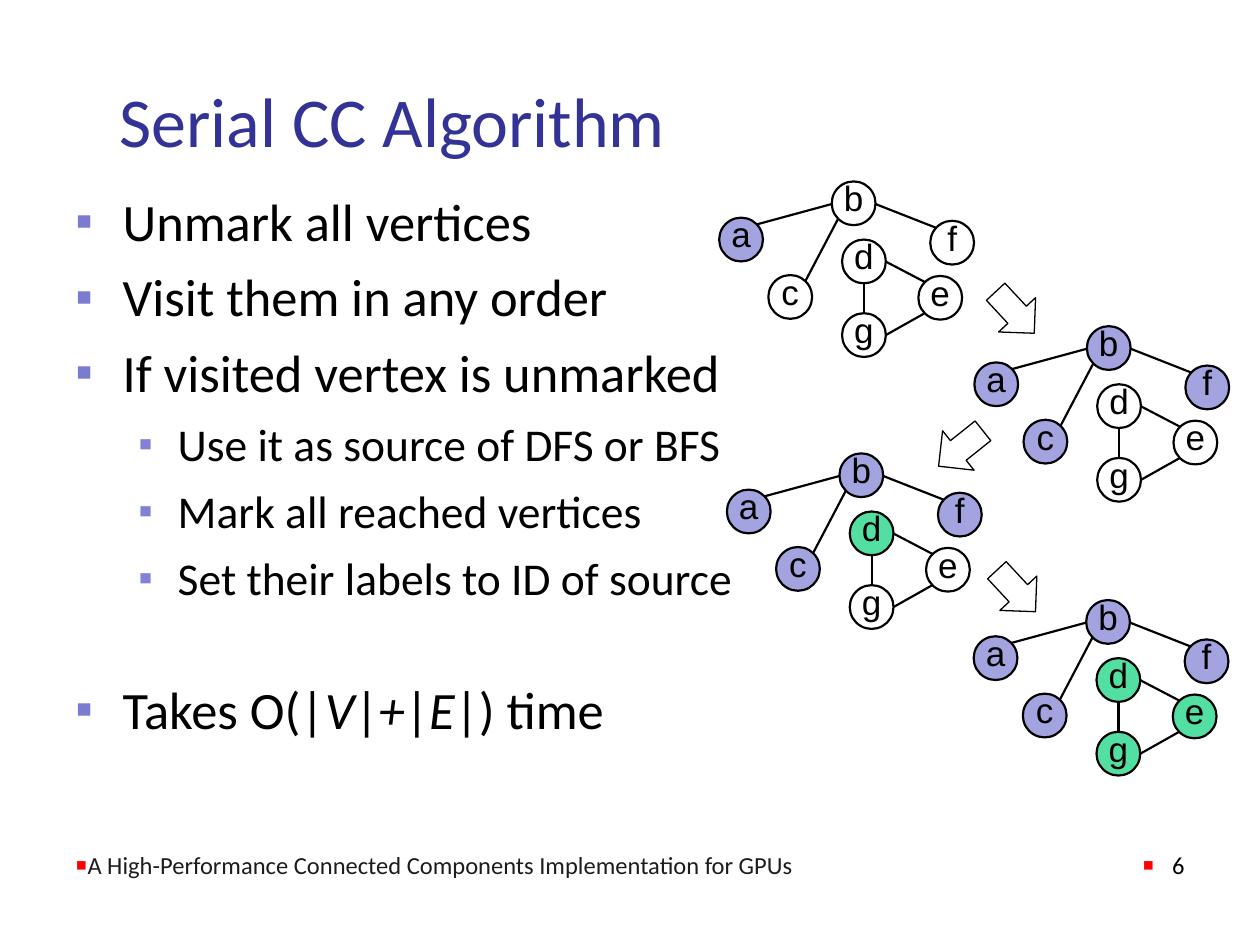
from dataclasses import dataclass

from lxml import etree
from pptx import Presentation
from pptx.dml.color import RGBColor
from pptx.enum.shapes import MSO_CONNECTOR, MSO_SHAPE
from pptx.enum.text import MSO_ANCHOR, PP_ALIGN
from pptx.oxml.ns import qn
from pptx.util import Pt

LINE = MSO_CONNECTOR.STRAIGHT
OVAL = MSO_SHAPE.OVAL
ARROW = MSO_SHAPE.RIGHT_ARROW
TOP, MIDDLE, BOTTOM = MSO_ANCHOR.TOP, MSO_ANCHOR.MIDDLE, MSO_ANCHOR.BOTTOM
LEFT, CENTER, RIGHT = PP_ALIGN.LEFT, PP_ALIGN.CENTER, PP_ALIGN.RIGHT


@dataclass(frozen=True)
class Theme:
    """Colours, fonts and type sizes of the slide."""
    black: str = "000000"
    title: str = "333397"
    foot: str = "1C1C1C"
    mark: str = "7B7BD1"
    submark: str = "8282D4"
    red: str = "FF0000"
    violet: str = "A3A3E0"
    green: str = "54DFA2"
    sans: str = "Calibri"
    label: str = "Arial"
    head_size: int = 40
    body_size: int = 30
    sub_size: int = 26
    node_size: int = 20
    foot_size: int = 14


THEME = Theme()
NODE = 25
NODES = {
    "d": (70.2, 33.2), "g": (70.2, 75.3), "a": (0, 20.7), "c": (28.1, 53.5),
    "e": (113.8, 54), "f": (120.6, 22.5), "b": (64.3, 0),
}
EDGES = [
    (82.7, 58.2, 82.7, 75.3), (117.4, 57.4, 95.2, 45.8),
    (67.9, 21.4, 49.2, 57), (64.3, 12.9, 21.2, 24.6),
    (89.3, 12.9, 124.2, 26.6), (117.4, 75.3, 95.2, 87.8),
]
GRAPHS = [
    (411, 103.7, "a", ""), (556.8, 186.4, "abcf", ""),
    (415.4, 259.1, "abcf", "d"), (556.4, 342.9, "abcf", "deg"),
]
ARROWS = [(563.8, 164.2, 47.1), (564.5, 323.3, 47.1), (532.8, 241.9, 141.4)]
ITEMS = [
    (0, 0, ["Unmark all vertices"]),
    (0, 7.2, ["Visit them in any order"]),
    (0, 7.2, ["If visited vertex is unmarked"]),
    (1, 7.2, ["Use it as source of DFS or BFS"]),
    (1, 7.2, ["Mark all reached vertices"]),
    (1, 7.2, ["Set their labels to ID of source"]),
    (0, 41.3, ["Takes O(|", "V", "|", "+", "|", "E", "|) time"]),
]


def add_box(slide, left, top, width, height, anchor, inset=7.2):
    """Add a wrapping text box and return its text frame."""
    shape = slide.shapes.add_textbox(Pt(left), Pt(top), Pt(width), Pt(height))
    frame = shape.text_frame
    frame.word_wrap = True
    frame.vertical_anchor = anchor
    frame.margin_left = Pt(inset)
    return frame


def add_run(para, text, size, color, face=THEME.sans, slant=False):
    """Add one styled run to a paragraph."""
    run = para.add_run()
    run.text = text
    font = run.font
    font.name, font.size, font.italic = face, Pt(size), slant
    font.color.rgb = RGBColor.from_string(color)


def add_mark(para, color, scale, margin=0, hang=0):
    """Give a paragraph a square bullet and a hanging indent."""
    props = para._p.get_or_add_pPr()
    props.set("marL", str(Pt(margin)))
    props.set("indent", str(-Pt(hang)))
    tint = etree.SubElement(props, qn("a:buClr"))
    etree.SubElement(tint, qn("a:srgbClr"), val=color)
    etree.SubElement(props, qn("a:buSzPct"), val=str(scale * 1000))
    etree.SubElement(props, qn("a:buFont"), typeface=THEME.label)
    etree.SubElement(props, qn("a:buChar"), char="▪")


def add_list(slide):
    """Add the two-level list of steps."""
    frame = add_box(slide, 36, 104.4, 665.3, 352.8, TOP)
    looks = [(THEME.body_size, THEME.mark, 95, 27, 27),
             (THEME.sub_size, THEME.submark, 90, 58.5, 22.5)]
    for index, (level, gap, parts) in enumerate(ITEMS):
        para = frame.add_paragraph() if index else frame.paragraphs[0]
        size, *mark = looks[level]
        para.level = level
        para.space_before = Pt(gap)
        add_mark(para, *mark)
        for turn, part in enumerate(parts):
            add_run(para, part, size, THEME.black, slant=turn % 2 == 1)


def add_foot(slide, left, width, text, color, align, hang):
    """Add a footer line with a red bullet."""
    para = add_box(slide, left, 470.2, width, 36, BOTTOM).paragraphs[0]
    para.alignment = align
    add_mark(para, THEME.red, 140, hang, hang)
    add_run(para, text, THEME.foot_size, color)


def style(shape, fill, weight):
    """Set the fill and black outline of a shape."""
    shape.shadow.inherit = False
    if fill:
        shape.fill.solid()
        shape.fill.fore_color.rgb = RGBColor.from_string(fill)
    else:
        shape.fill.background()
    shape.line.color.rgb = RGBColor.from_string(THEME.black)
    shape.line.width = Pt(weight)


def add_edge(group, x, y, ends):
    """Draw one graph edge."""
    x1, y1, x2, y2 = ends
    edge = group.shapes.add_connector(
        LINE, Pt(x + x1), Pt(y + y1), Pt(x + x2), Pt(y + y2))
    edge.line.color.rgb = RGBColor.from_string(THEME.black)
    edge.line.width = Pt(1.25)
    etree.SubElement(edge._element.spPr, qn("a:effectLst"))


def add_node(group, x, y, name, fill):
    """Draw one labelled vertex."""
    node = group.shapes.add_shape(OVAL, Pt(x), Pt(y), Pt(NODE), Pt(NODE))
    style(node, fill, 1.25)
    frame = node.text_frame
    frame.margin_left = frame.margin_right = 0
    frame.margin_top = frame.margin_bottom = 0
    frame.vertical_anchor = BOTTOM
    para = frame.paragraphs[0]
    para.alignment = CENTER
    add_run(para, name, THEME.node_size, THEME.black, THEME.label)


def add_graph(slide, x, y, first, second):
    """Draw the graph with its two sets of marked vertices."""
    group = slide.shapes.add_group_shape()
    for ends in EDGES:
        add_edge(group, x, y, ends)
    fills = dict.fromkeys(first, THEME.violet)
    fills.update(dict.fromkeys(second, THEME.green))
    for name, (dx, dy) in NODES.items():
        add_node(group, x + dx, y + dy, name, fills.get(name))


def add_arrow(slide, x, y, turn):
    """Draw a turned block arrow."""
    arrow = slide.shapes.add_shape(ARROW, Pt(x), Pt(y), Pt(32.4), Pt(28.8))
    arrow.rotation = turn
    style(arrow, None, 0.75)


def main():
    """Build the slide and save it."""
    deck = Presentation()
    deck.slide_width, deck.slide_height = Pt(720), Pt(540)
    slide = deck.slides.add_slide(deck.slide_layouts[6])
    head = add_box(slide, 36, 43.2, 648, 50.4, MIDDLE, 32.4)
    add_run(head.paragraphs[0], "Serial CC Algorithm",
            THEME.head_size, THEME.title)
    add_list(slide)
    add_foot(slide, 36, 498.2,
             "A High-Performance Connected Components Implementation for GPUs",
             THEME.foot, LEFT, 0)
    add_foot(slide, 534.2, 149.8, "6", THEME.black, RIGHT, 17)
    for graph in GRAPHS:
        add_graph(slide, *graph)
    for arrow in ARROWS:
        add_arrow(slide, *arrow)
    deck.save("out.pptx")


if __name__ == "__main__":
    main()
